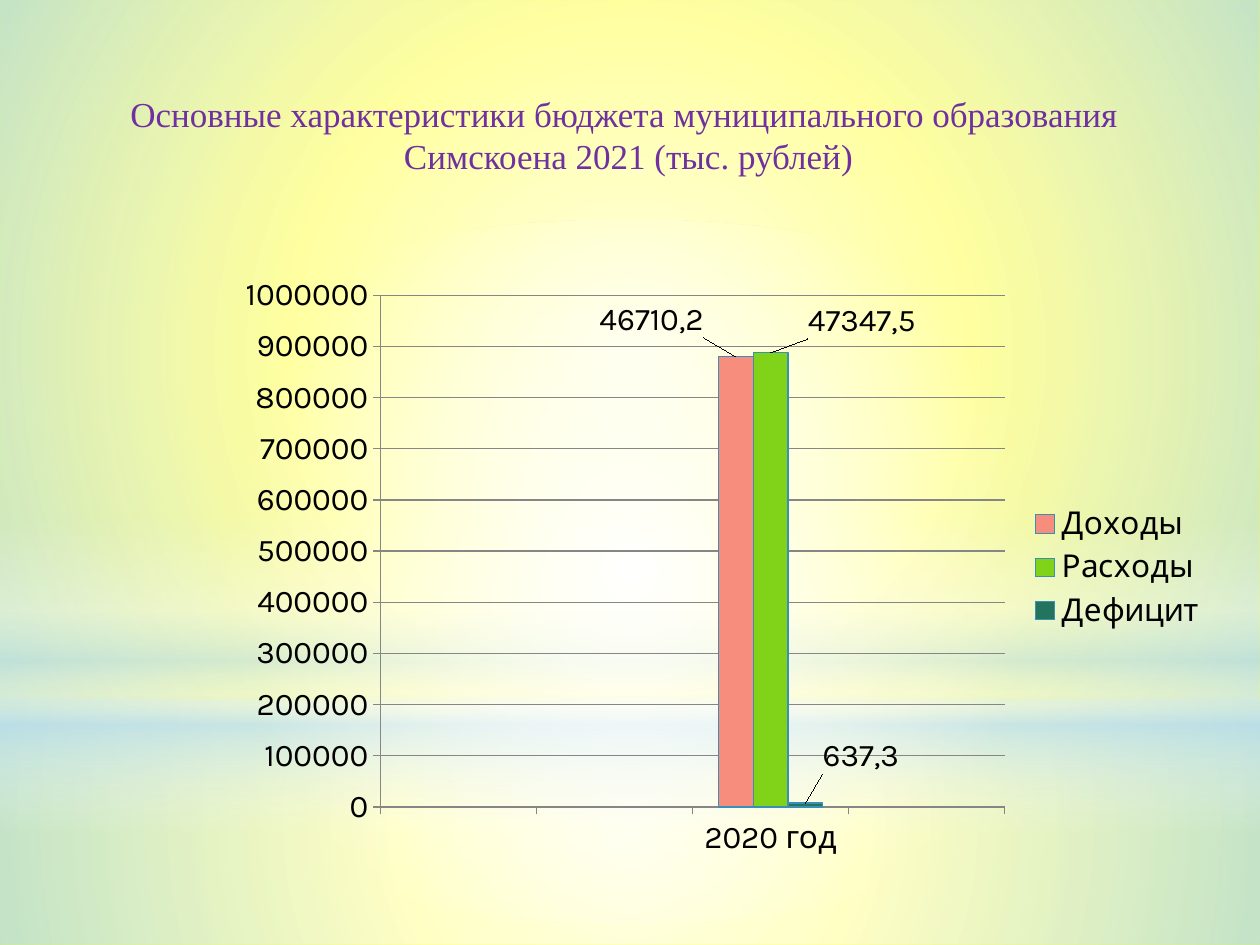
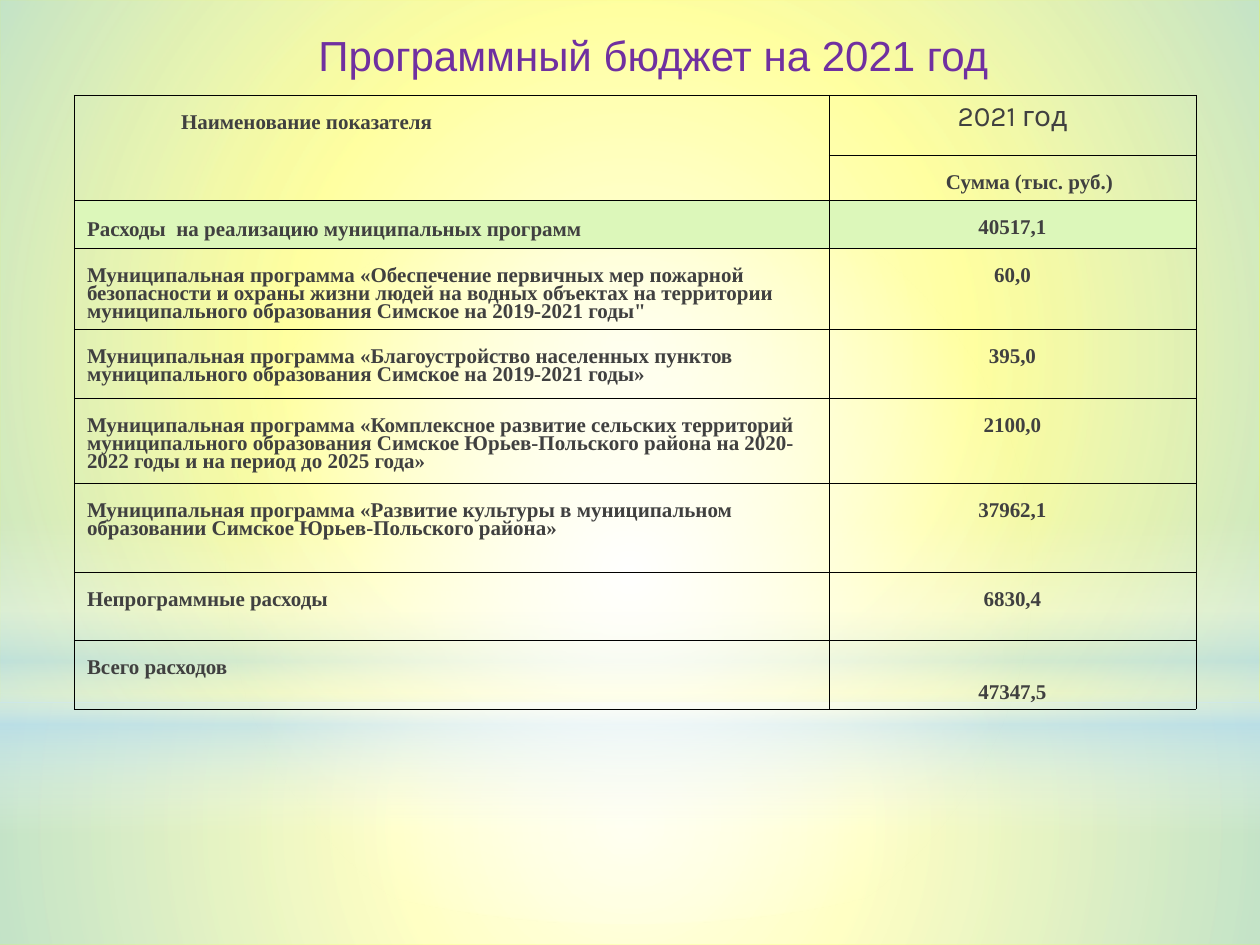
import pptx
import pptx.chart.data
import pptx.dml.color
import pptx.enum.chart
import pptx.enum.shapes
import pptx.enum.text
import pptx.oxml
import pptx.oxml.ns
import pptx.util

SCALE = 914400 / 126
COLORS = {
    "page": "FFFF00", "white": "FFFFFF", "sky": "B4DCFA", "title": "7030A0",
    "black": "000000", "text": "404040", "subtotal": "DCF7BA", "grid": "868686",
    "bar_edge": "3A8FB7", "income": "F78D7C", "expense": "81D31A", "deficit": "23735D",
}
SERIF, SANS, CHART_FONT = "Times New Roman", "Arial", "Karla"
NAMESPACES = pptx.oxml.ns.nsdecls("a", "c")
CIRCLE = ('<a:path path="circle"><a:fillToRect l="50000" t="50000" '
          'r="50000" b="50000"/></a:path>')
DOWN = '<a:lin ang="5400000" scaled="0"/>'
ALIGN = pptx.enum.text.PP_ALIGN
ANCHOR = pptx.enum.text.MSO_ANCHOR
qn = pptx.oxml.ns.qn


def px(length):
    return pptx.util.Emu(round(length * SCALE))


def color(name):
    return pptx.dml.color.RGBColor.from_string(COLORS[name])


def write(frame, text, size=12, font=SERIF, ink="text", bold=False,
          align=ALIGN.LEFT, indent=0, spacing=None, before=None):
    """Fill the first paragraph of a text frame."""
    para = frame.paragraphs[0]
    para.text = text
    para.alignment = align
    para.line_spacing = spacing
    if before is not None:
        para.space_before = pptx.util.Pt(before)
    if indent:
        properties = para._p.get_or_add_pPr()
        properties.set("marL", str(px(indent)))
        properties.set("indent", "0")
    for span in para.runs:
        span.font.size = pptx.util.Pt(size)
        span.font.name = font
        span.font.bold = bold
        span.font.color.rgb = color(ink)


class Builder:
    def __init__(self):
        self.deck = pptx.Presentation()
        self.deck.slide_width, self.deck.slide_height = px(1260), px(945)
        self.page = None

    def add_page(self):
        self.page = self.deck.slides.add_slide(self.deck.slide_layouts[5])

    def title(self, text, left, top, width, height, **style):
        box = self.page.shapes.title
        box.left, box.top, box.width, box.height = map(px, (left, top, width, height))
        frame = box.text_frame
        frame.word_wrap = True
        frame.auto_size = pptx.enum.text.MSO_AUTO_SIZE.NONE
        frame.vertical_anchor = ANCHOR.MIDDLE
        write(frame, text, ink="title", align=ALIGN.CENTER, **style)

    def glow(self, kind, left, top, width, height, stops, direction):
        """Draw a gradient shape; each stop is percent, colour name, opacity."""
        shape = self.page.shapes.add_shape(kind, *map(px, (left, top, width, height)))
        shape.shadow.inherit = False
        shape.line.fill.background()
        shape.fill.background()
        marks = "".join(
            f'<a:gs pos="{place * 1000}"><a:srgbClr val="{COLORS[name]}">'
            f'<a:alpha val="{opacity * 1000}"/></a:srgbClr></a:gs>'
            for place, name, opacity in stops)
        gradient = pptx.oxml.parse_xml(
            f'<a:gradFill {NAMESPACES} rotWithShape="1"><a:gsLst>{marks}</a:gsLst>'
            f'{direction}</a:gradFill>')
        properties = shape.element.spPr
        properties.replace(properties.find(qn("a:noFill")), gradient)
        return shape

    def backdrop(self):
        """Build the glowing background and hand it to the slide master."""
        rect = pptx.enum.shapes.MSO_SHAPE.RECTANGLE
        oval = pptx.enum.shapes.MSO_SHAPE.OVAL
        glows = [
            (rect, 0, 703, 1260, 242,
             [(0, "white", 91), (37, "white", 76), (100, "sky", 79)], CIRCLE),
            (rect, 0, 0, 1260, 703,
             [(0, "white", 89), (48, "white", 62), (100, "sky", 79)], CIRCLE),
            (rect, 0, 519, 1260, 315,
             [(0, "white", 0), (29, "white", 30), (45, "sky", 40),
              (55, "white", 26), (65, "sky", 60), (100, "white", 0)], DOWN),
            (oval, 0, 220, 1260, 703, [(0, "white", 100), (56, "white", 0)], CIRCLE),
        ]
        master = self.deck.slide_master
        master.background.fill.solid()
        master.background.fill.fore_color.rgb = color("page")
        for order, glow in enumerate(glows):
            element = self.glow(*glow).element
            element.nvSpPr.cNvPr.set("id", str(100 + order))
            master.shapes.element.insert(2 + order, element)

    def chart(self, left, top, width, height, categories, series):
        """Draw clustered columns; each series has name, colour, values, label, shift."""
        data = pptx.chart.data.CategoryChartData()
        data.categories = categories
        for name, _, values, _, _ in series:
            data.add_series(name, values)
        chart = self.page.shapes.add_chart(
            pptx.enum.chart.XL_CHART_TYPE.COLUMN_CLUSTERED,
            *map(px, (left, top, width, height)), data).chart
        chart.has_title = False
        chart.font.size = pptx.util.Pt(18)
        chart.font.name = CHART_FONT
        chart.font.color.rgb = color("black")
        chart.has_legend = True
        chart.legend.position = pptx.enum.chart.XL_LEGEND_POSITION.RIGHT
        chart.legend.include_in_layout = False
        plot = chart.plots[0]
        plot.gap_width, plot.overlap = 150, 0
        plot.vary_by_categories = False
        values_axis = chart.value_axis
        values_axis.minimum_scale, values_axis.maximum_scale = 0, 1000000
        values_axis.major_unit = 100000
        values_axis.has_major_gridlines = True
        values_axis.tick_labels.number_format = "General"
        values_axis.tick_labels.number_format_is_linked = False
        for part in (values_axis, chart.category_axis, values_axis.major_gridlines):
            part.format.line.color.rgb = color("grid")
            part.format.line.width = pptx.util.Pt(0.75)
        for bars, (_, fill, values, label, shift) in zip(plot.series, series):
            bars.format.fill.solid()
            bars.format.fill.fore_color.rgb = color(fill)
            bars.format.line.color.rgb = color("bar_edge")
            bars.format.line.width = pptx.util.Pt(0.75)
            bars.data_labels.show_value = True
            filled = next(i for i, value in enumerate(values) if value is not None)
            point_label = bars.points[filled].data_label
            write(point_label.text_frame, label, size=18, font=CHART_FONT,
                  ink="black", align=ALIGN.CENTER)
            point_label.position = pptx.enum.chart.XL_LABEL_POSITION.OUTSIDE_END
            mark = next(chart.element.iter(qn("c:chart"))).xpath(
                f'.//c:ser[c:idx/@val="{bars.index}"]//c:dLbl')[0]
            mark.insert(1, self.layout(x=shift[0] / width, y=shift[1] / height))
        area = next(chart.element.iter(qn("c:plotArea")))
        for old in area.findall(qn("c:layout")):
            area.remove(old)
        area.insert(0, self.layout(("layoutTarget", "xMode", "yMode"),
                                   x=154 / width, y=30 / height,
                                   w=624 / width, h=512 / height))

    @staticmethod
    def layout(modes=(), **shares):
        """Make a manual chart layout from shares of the chart's size."""
        heads = "".join(f'<c:{mode} val="{"inner" if mode == "layoutTarget" else "edge"}"/>'
                        for mode in modes)
        sizes = "".join(f'<c:{key} val="{share:.3f}"/>' for key, share in shares.items())
        return pptx.oxml.parse_xml(
            f'<c:layout {NAMESPACES}><c:manualLayout>{heads}{sizes}'
            '</c:manualLayout></c:layout>')

    def table(self, left, top, widths, heights):
        holder = self.page.shapes.add_table(
            len(heights), len(widths),
            *map(px, (left, top, sum(widths), sum(heights))))
        table = holder.table
        table.first_row = table.horz_banding = False
        for column, width in zip(table.columns, widths):
            column.width = px(width)
        for row, height in zip(table.rows, heights):
            row.height = px(height)
        for cell in table.iter_cells():
            cell.fill.background()
            cell.margin_left = cell.margin_right = px(13)
            cell.margin_top, cell.margin_bottom = px(20), px(6)
        for properties in holder.element.iter(qn("a:tcPr")):
            for order, side in enumerate("LRTB"):
                properties.insert(order, pptx.oxml.parse_xml(
                    f'<a:ln{side} {NAMESPACES} w="762"><a:solidFill>'
                    f'<a:srgbClr val="{COLORS["black"]}"/></a:solidFill></a:ln{side}>'))
        return table


def budget_chart(builder):
    builder.title("Основные характеристики бюджета муниципального образования \v"
                  "Симскоена 2021 (тыс. рублей)", 43, 55, 1171, 159, size=20)
    builder.chart(227, 265, 992, 605, ["", "", "2020 год", ""], [
        ("Доходы", "income", (None, None, 879797.4, None), "46710,2", (-84, -14)),
        ("Расходы", "expense", (None, None, 887297.4, None), "47347,5", (91, -9)),
        ("Дефицит", "deficit", (None, None, 7500, None), "637,3", (56, -24)),
    ])


def program_table(builder):
    builder.title("Программный бюджет на 2021 год", 64, 15, 1109, 79,
                  size=24, font=SANS, indent=70)
    programs = [
        ("Расходы  на реализацию муниципальных программ", "40517,1"),
        ("Муниципальная программа «Обеспечение первичных мер пожарной безопасности "
         "и охраны жизни людей на водных объектах на территории муниципального "
         "образования Симское на 2019-2021 годы\"", "60,0"),
        ("Муниципальная программа «Благоустройство населенных пунктов "
         "муниципального образования Симское на 2019-2021 годы»", "395,0"),
        ("Муниципальная программа «Комплексное развитие сельских территорий "
         "муниципального образования Симское Юрьев-Польского района на 2020-2022 "
         "годы и на период до 2025 года»", "2100,0"),
        ("Муниципальная программа «Развитие культуры в муниципальном образовании "
         "Симское Юрьев-Польского района»", "37962,1"),
        ("Непрограммные расходы", "6830,4"),
        ("Всего расходов", "47347,5"),
    ]
    table = builder.table(74, 95, (755, 367), (60, 45, 48, 81, 69, 85, 89, 68, 69))
    strong = {"bold": True, "spacing": 0.78}
    table.cell(0, 0).merge(table.cell(1, 0))
    write(table.cell(0, 0).text_frame, "Наименование показателя", indent=94, **strong)
    year = table.cell(0, 1)
    year.margin_top = px(6)
    write(year.text_frame, "2021 год", size=16, font=CHART_FONT,
          align=ALIGN.CENTER, spacing=1.01, before=7)
    write(table.cell(1, 1).text_frame, "Сумма (тыс. руб.)", indent=104, **strong)
    for row, (name, amount) in enumerate(programs, start=2):
        write(table.cell(row, 0).text_frame, name, **strong)
        write(table.cell(row, 1).text_frame, amount, align=ALIGN.CENTER, **strong)
    for column in range(2):
        subtotal = table.cell(2, column)
        subtotal.fill.solid()
        subtotal.fill.fore_color.rgb = color("subtotal")
    table.cell(2, 0).vertical_anchor = ANCHOR.MIDDLE
    table.cell(8, 1).vertical_anchor = ANCHOR.BOTTOM


def main():
    builder = Builder()
    builder.add_page()
    builder.backdrop()
    budget_chart(builder)
    builder.add_page()
    program_table(builder)
    builder.deck.save("out.pptx")


if __name__ == "__main__":
    main()
